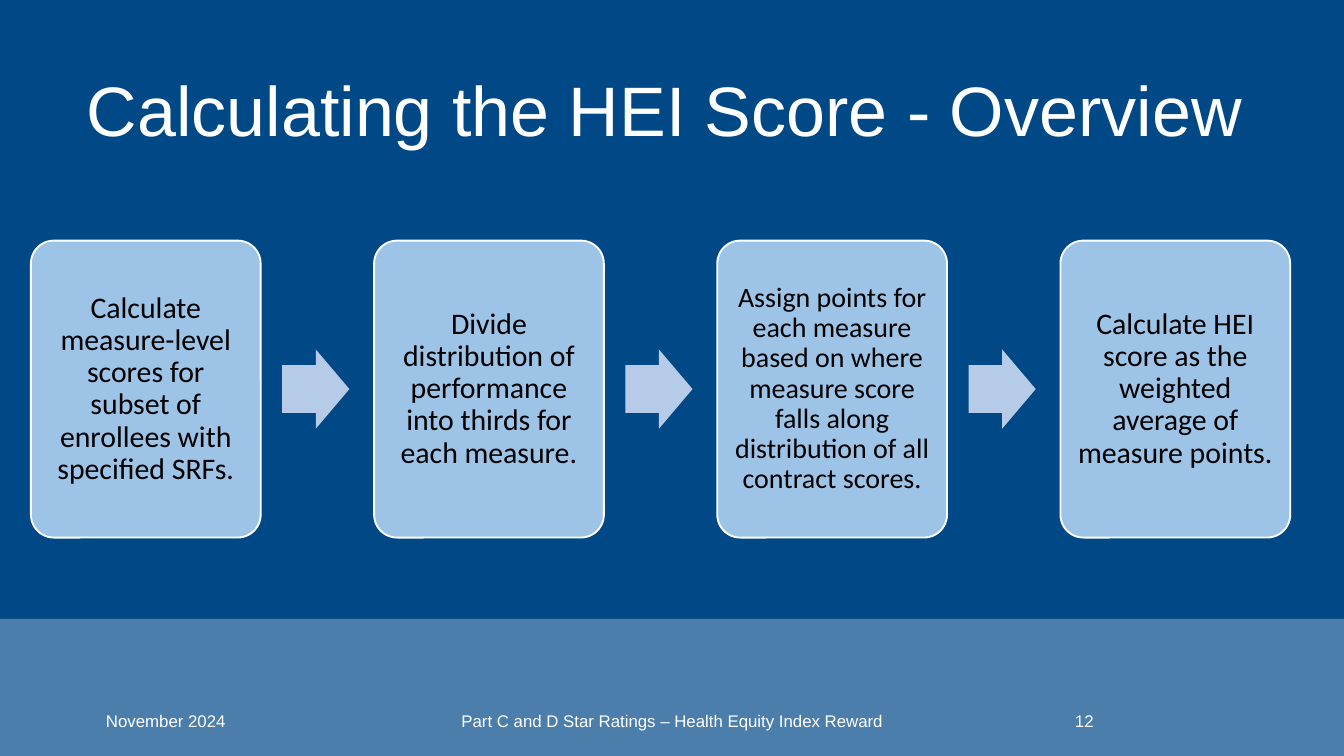
from lxml import etree
from pptx import Presentation
from pptx.dml.color import RGBColor
from pptx.enum import shapes, text
from pptx.oxml.ns import qn
from pptx.util import Inches, Pt

SLIDE_W = 10
SLIDE_H = SLIDE_W * 9 / 16
NAVY, PALE, WHITE, BLACK = "004986", "DAE3F3", "FFFFFF", "000000"
STEP_FILL, ARROW_FILL = "9DC3E6", "B5CBE7"
CENTER, LEFT = text.PP_ALIGN.CENTER, text.PP_ALIGN.LEFT

STEPS = [
    ("Calculate measure-level scores for subset of enrollees with specified SRFs.", 16),
    ("Divide distribution of performance into thirds for each measure.", 16),
    ("Assign points for each measure based on where measure score falls along "
     "distribution of all contract scores.", 15),
    ("Calculate HEI score as the weighted average of measure points.", 16),
]


def color(hex_string):
    return RGBColor.from_string(hex_string)


def add_block(slide, kind, box, fill, line=None):
    block = slide.shapes.add_shape(kind, *map(Inches, box))
    block.shadow.inherit = False
    block.fill.solid()
    block.fill.fore_color.rgb = color(fill)
    if line:
        block.line.color.rgb = color(line)
        block.line.width = Pt(1)
    else:
        block.line.fill.background()
    return block


def write(shape, words, size, ink, font="Arial", align=CENTER, spacing=None):
    frame = shape.text_frame
    frame.word_wrap = True
    frame.vertical_anchor = text.MSO_ANCHOR.MIDDLE
    paragraph = frame.paragraphs[0]
    paragraph.text = words
    paragraph.alignment = align
    paragraph.line_spacing = spacing
    paragraph.font.name = font
    paragraph.font.size = Pt(size)
    paragraph.font.color.rgb = color(ink)
    return frame


def add_label(slide, box, words, size, **style):
    label = slide.shapes.add_textbox(*map(Inches, box))
    write(label, words, size, WHITE, **style)


def add_background(slide, left, top, width, height):
    rectangle = shapes.MSO_SHAPE.RECTANGLE
    add_block(slide, rectangle, (left, top, width, height), NAVY)
    # Translucent band along the bottom
    band_h = 1.02
    band = add_block(slide, rectangle, (left, top + height - band_h, width, band_h), PALE)
    tint = band.fill._xPr.find(qn("a:solidFill"))[0]
    etree.SubElement(tint, qn("a:alpha"), val="35000")


def add_process(slide, left, top, width, height):
    step_w, arrow_w, arrow_h = 1.71, 0.5, 0.59
    pitch = (width - step_w) / (len(STEPS) - 1)
    arrow_offset = step_w + 0.16
    for i, (words, size) in enumerate(STEPS):
        x = left + i * pitch
        step = add_block(slide, shapes.MSO_SHAPE.ROUNDED_RECTANGLE,
                         (x, top, step_w, height), STEP_FILL, WHITE)
        step.adjustments[0] = 0.1
        frame = write(step, words, size, BLACK, font="Calibri", spacing=0.9)
        frame.margin_left = frame.margin_right = Inches(0.07)
        frame.margin_top = frame.margin_bottom = Inches(0.07)
        # Arrow to the next step
        if i < len(STEPS) - 1:
            arrow = add_block(slide, shapes.MSO_SHAPE.RIGHT_ARROW,
                              (x + arrow_offset, top + (height - arrow_h) / 2,
                               arrow_w, arrow_h), ARROW_FILL)
            arrow.adjustments[0] = 0.6
            arrow.adjustments[1] = 0.5


def add_footer(slide, left, top, width, height):
    add_label(slide, (left, top, 2.25, height), "November 2024", 9, align=LEFT)
    add_label(slide, (left + 2.62, top, 3.38, height),
              "Part C and D Star Ratings – Health Equity Index Reward", 9)
    number_w = 0.38
    add_label(slide, (left + width - number_w, top, number_w, height), "12", 9, align=LEFT)


def main():
    deck = Presentation()
    deck.slide_width, deck.slide_height = Inches(SLIDE_W), Inches(SLIDE_H)
    slide = deck.slides.add_slide(deck.slide_layouts[6])
    add_background(slide, -0.17, 0, SLIDE_W + 0.17, SLIDE_H)
    # Title
    add_label(slide, (0.43, 0.3, 9.04, 1.09),
              "Calculating the HEI Score - Overview", 37.5, spacing=0.9)
    add_process(slide, 0.23, 1.79, 9.37, 2.21)
    add_footer(slide, 0.69, 5.21, 7.59, 0.3)
    deck.save("out.pptx")


if __name__ == "__main__":
    main()
